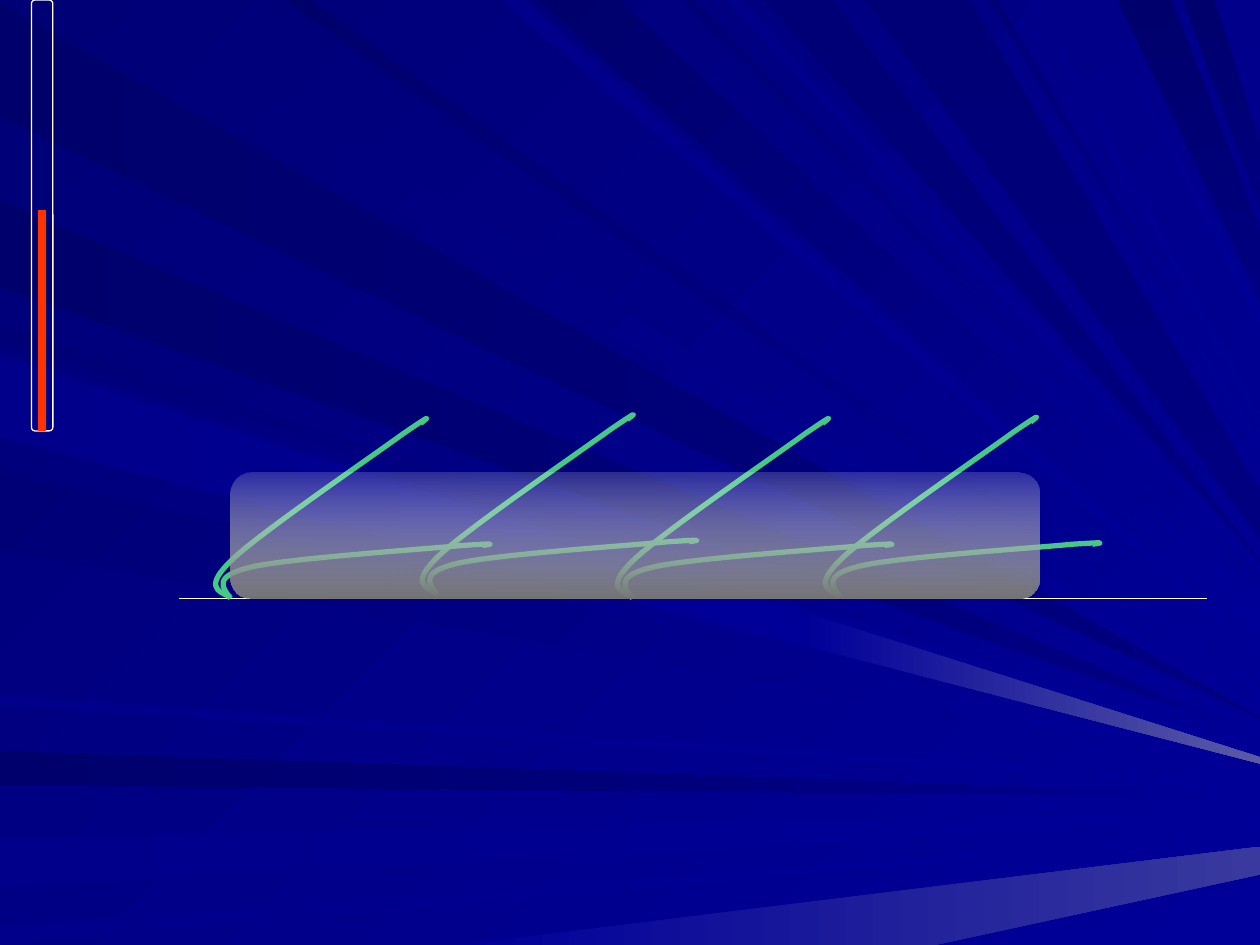
from lxml.etree import SubElement
from pptx import Presentation
from pptx.dml.color import RGBColor
from pptx.enum.shapes import MSO_CONNECTOR, MSO_SHAPE
from pptx.oxml.ns import qn
from pptx.util import Inches, Pt

WHITE = RGBColor(0xFF, 0xFF, 0xFF)
RED = RGBColor(0xFF, 0x33, 0x00)
GREEN = RGBColor(0x45, 0xC9, 0x84)
GREY = RGBColor(0x76, 0x76, 0x76)
BLACK_BLUE = RGBColor(0x00, 0x00, 0x6C)
NIGHT = RGBColor(0x00, 0x00, 0x76)
NAVY = RGBColor(0x00, 0x00, 0x80)
ROYAL = RGBColor(0x00, 0x00, 0x8A)
BLUE = RGBColor(0x00, 0x00, 0x99)
GLOW = RGBColor(0x5A, 0x5A, 0xA6)
SOFT_GLOW = RGBColor(0x39, 0x39, 0x9E)

WIDTH, HEIGHT = 10, 7.5
ACROSS, DIAGONAL, DOWN = 0, 45, 90

RAYS = [
    ("left", 0.02, 0.93, 5.69, 5.7, BLACK_BLUE, NAVY, ACROSS),
    ("top", 0.26, 1.01, 5.63, 5.62, NIGHT, BLUE, DIAGONAL),
    ("left", 5.96, 6.23, 6.31, 6.32, BLACK_BLUE, NAVY, ACROSS, 7, BLUE),
    ("left", 6.65, 7.04, 6.43, 6.51, ROYAL, BLUE, ACROSS),
    ("left", 7.35, 7.5, 6.62, 6.62, ROYAL, BLUE, ACROSS),
    ("bottom", 3.64, 7.42, 6.72, 6.94, BLUE, SOFT_GLOW, ACROSS),
    ("left", 2.58, 2.7, 5.89, 5.89, NIGHT, BLUE, DIAGONAL),
    ("left", 1.59, 2.28, 5.84, 5.85, BLACK_BLUE, NAVY, ACROSS, 8.73, BLUE),
    ("top", 3.98, 4.16, 5.21, 5.15, ROYAL, BLUE, DIAGONAL),
    ("top", 4.26, 4.92, 5.07, 4.79, BLACK_BLUE, BLUE, DIAGONAL),
    ("top", 5.4, 5.52, 4.63, 4.63, NIGHT, BLUE, DIAGONAL),
    ("top", 6.06, 6.61, 4.46, 4.45, NIGHT, NAVY, DOWN),
    ("top", 8.87, 9.3, 2.37, 1.83, BLACK_BLUE, NAVY, DOWN),
    ("top", 9.39, 9.64, 1.67, 1.14, BLACK_BLUE, NAVY, DOWN),
    ("left", 2.78, 3.42, 5.96, 6.02, NAVY, BLUE, DIAGONAL),
    ("left", 3.74, 4.37, 6.05, 6.06, NIGHT, BLUE, DIAGONAL),
    ("left", 5.52, 5.6, 6.21, 6.23, ROYAL, BLUE, ACROSS),
    ("top", 2.25, 2.47, 5.52, 5.47, BLACK_BLUE, BLUE, DIAGONAL),
    ("top", 5.77, 5.88, 4.54, 4.53, ROYAL, BLUE, DIAGONAL),
    ("top", 6.86, 7.7, 4.28, 3.9, NIGHT, NAVY, DOWN),
    ("top", 7.85, 7.92, 3.6, 3.54, NIGHT, BLUE, DIAGONAL),
    ("top", 8.15, 8.24, 3.36, 3.35, ROYAL, BLUE, DIAGONAL),
    ("top", 8.65, 8.72, 2.58, 2.49, ROYAL, BLUE, DIAGONAL),
    ("left", 2.83, 3.47, 6.01, 6.06, ROYAL, BLUE, ACROSS, 6.35, GLOW),
]

HAIR_ORIGINS = [(1.69, 4.31), (3.33, 4.28), (4.88, 4.31), (6.53, 4.3)]
HAIR_SIZE = (2.28, 0.44)
HAIR_START = (0.14, 0.44)
HAIR_CURVES = [
    [(0.07, 0.35), (0, 0.26), (0.31, 0.19)],
    [(0.62, 0.12), (1.67, 0.05), (1.98, 0.02)],
    [(2.28, 0), (2.21, 0.01), (2.14, 0.02)],
]
HAIR_POSES = [(0, 0, 0), (-0.25, -0.49, 329.5)]

LINES = [
    ((1.42, 4.75), (9.58, 4.75), WHITE, 0.75),
    ((0.33, 2.58), (0.33, 3.42), RED, 4.5),
    ((0.33, 1.67), (0.33, 2.6), RED, 4.5),
]


def set_gradient(fill, start, end, clockwise_angle):
    fill.gradient()
    fill.gradient_angle = (360 - clockwise_angle) % 360
    for stop, color in zip(fill.gradient_stops, (start, end)):
        stop.color.rgb = color


def add_outline(shapes, points):
    corners = [(Inches(x), Inches(y)) for x, y in points]
    builder = shapes.build_freeform(*corners[0])
    builder.add_line_segments(corners[1:], close=True)
    shape = builder.convert_to_shape()
    shape.shadow.inherit = False
    return shape


def add_beam(shapes, points, start, end, angle):
    shape = add_outline(shapes, points)
    shape.line.fill.background()
    set_gradient(shape.fill, start, end, angle)


def point_between(start, end, x):
    share = (x - start[0]) / (end[0] - start[0])
    return x, start[1] + share * (end[1] - start[1])


def add_ray(shapes, side, first, second, first_tip, second_tip, start, end, angle, split=WIDTH, tail=None):
    if side == "left":
        roots = [(0, first), (0, second)]
    else:
        y = 0 if side == "top" else HEIGHT
        roots = [(first, y), (second, y)]
    tips = [(WIDTH, first_tip), (WIDTH, second_tip)]
    middles = [point_between(root, tip, split) for root, tip in zip(roots, tips)]
    add_beam(shapes, roots + middles[::-1], start, end, angle)
    if tail:
        add_beam(shapes, middles + tips[::-1], end, tail, angle)


def add_path_step(path, tag, points):
    step = SubElement(path, qn(tag))
    for x, y in points:
        SubElement(step, qn("a:pt"), x=str(Inches(x)), y=str(Inches(y)))


def add_hair(shapes, left, top, rotation):
    width, height = HAIR_SIZE
    right, bottom = left + width, top + height
    shape = add_outline(shapes, [(left, top), (right, top), (right, bottom), (left, bottom)])
    path = next(shape.element.iter(qn("a:path")))
    for step in list(path):
        path.remove(step)
    add_path_step(path, "a:moveTo", [HAIR_START])
    for curve in HAIR_CURVES:
        add_path_step(path, "a:cubicBezTo", curve)
    shape.fill.background()
    shape.line.color.rgb = GREEN
    shape.line.width = Pt(3)
    shape.rotation = rotation


def add_line(shapes, start, end, color, width):
    line = shapes.add_connector(MSO_CONNECTOR.STRAIGHT, *map(Inches, start + end))
    line.line.color.rgb = color
    line.line.width = Pt(width)
    SubElement(line.element.spPr, qn("a:effectLst"))


def add_rounded_box(shapes, left, top, width, height):
    box = shapes.add_shape(MSO_SHAPE.ROUNDED_RECTANGLE, *map(Inches, (left, top, width, height)))
    box.shadow.inherit = False
    return box


presentation = Presentation()
presentation.slide_width = Inches(WIDTH)
presentation.slide_height = Inches(HEIGHT)
slide = presentation.slides.add_slide(presentation.slide_layouts[6])
set_gradient(slide.background.fill, NIGHT, BLUE, DIAGONAL)

rays = slide.shapes.add_group_shape()
for ray in RAYS:
    add_ray(rays.shapes, *ray)

add_line(slide.shapes, *LINES[0])
tube = add_rounded_box(slide.shapes, 0.25, 0, 0.17, 3.42)
tube.fill.background()
tube.line.color.rgb = WHITE
tube.line.width = Pt(0.75)
for line in LINES[1:]:
    add_line(slide.shapes, *line)

for shift_x, shift_y, rotation in HAIR_POSES:
    for left, top in HAIR_ORIGINS:
        add_hair(slide.shapes, left + shift_x, top + shift_y, rotation)

layer = add_rounded_box(slide.shapes, 1.83, 3.75, 6.42, 1)
layer.line.fill.background()
set_gradient(layer.fill, WHITE, GREY, DOWN)
first_color = next(layer.element.spPr.iter(qn("a:srgbClr")))
SubElement(first_color, qn("a:alpha"), val="17000")

presentation.save("out.pptx")
